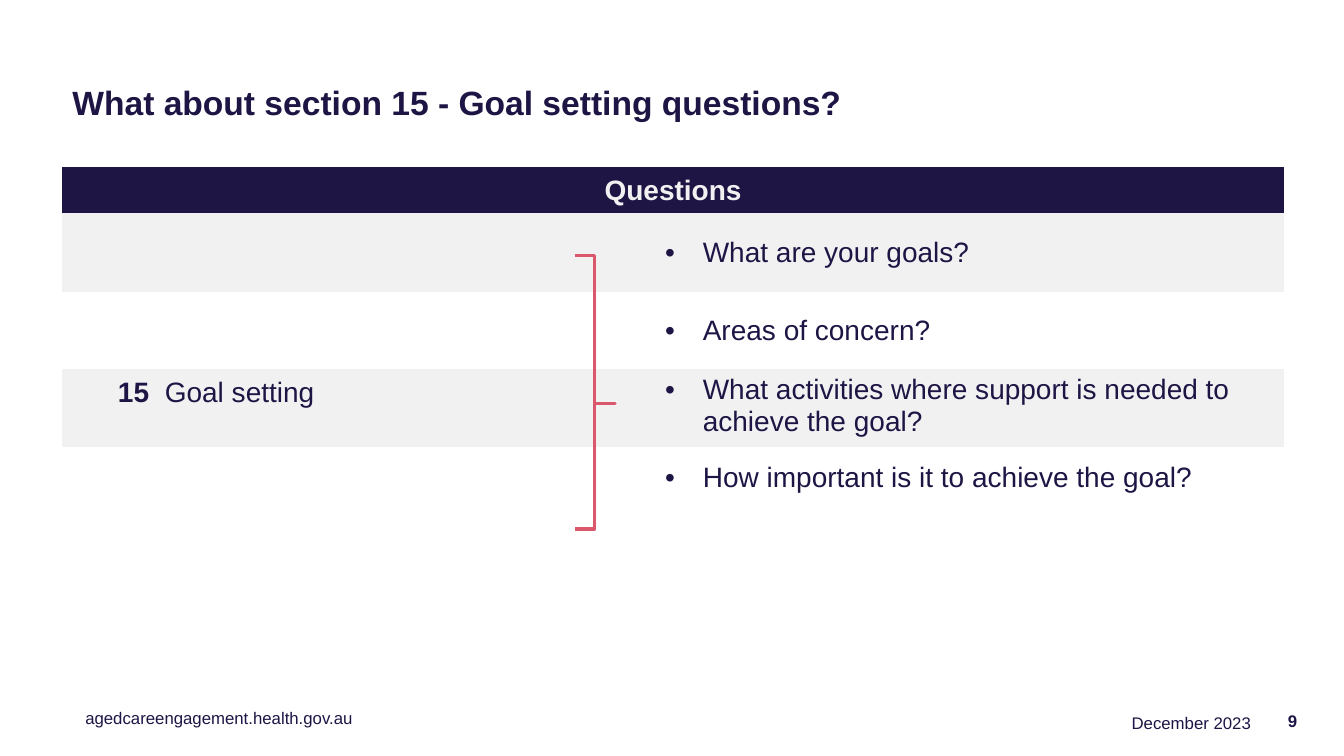
from lxml.etree import SubElement
from pptx import Presentation
from pptx.dml.color import RGBColor
from pptx.enum.shapes import MSO_SHAPE
from pptx.enum.text import MSO_ANCHOR, PP_ALIGN
from pptx.oxml.ns import qn
from pptx.util import Cm, Pt

# Content
TITLE = "What about section 15 - Goal setting questions?"
HEADER = "Questions"
SECTION = ("15", "\tGoal setting")
SECTION_ROW = 3
QUESTIONS = [
    "What are your goals?",
    "Areas of concern?",
    "What activities where support is needed to achieve the goal?",
    "How important is it to achieve the goal?",
]
# text, (left, top, width, height) in cm, alignment, anchor, bold
FOOTERS = [
    ("agedcareengagement.health.gov.au", (1.9, 17.7, 7.27, 0.77),
     PP_ALIGN.LEFT, MSO_ANCHOR.TOP, False),
    ("December 2023", (24.15, 17.83, 7.63, 0.77),
     PP_ALIGN.RIGHT, MSO_ANCHOR.TOP, False),
    ("9", (31.8, 17.65, 1.14, 1.02), PP_ALIGN.RIGHT, MSO_ANCHOR.MIDDLE, True),
]
COLORS = {"navy": "1E1545", "band": "F2F1F2", "brace": "DA576C"}
COLUMN_WIDTHS = [1.15, 8.41, 1.6, 3.17, 0.58, 15.85]
ROW_HEIGHTS = [1.15, 1.98, 1.96, 1.96, 2.34, 1.96, 1.3]
LINE_HEIGHT = 0.78


def color(name):
    return RGBColor.from_string(COLORS[name])


def add_run(paragraph, text, size, bold=False, color_name="navy"):
    run = paragraph.add_run()
    run.text = text
    run.font.name = "Arial"
    run.font.size = Pt(size)
    run.font.bold = bold
    run.font.color.rgb = color(color_name)


def add_bullet(paragraph):
    properties = paragraph._p.get_or_add_pPr()
    properties.set("marL", str(Cm(0.95)))
    properties.set("indent", str(Cm(-0.95)))
    SubElement(properties, qn("a:buFont")).set("typeface", "Arial")
    SubElement(properties, qn("a:buChar")).set("char", "•")


def add_tab_stop(paragraph, position):
    tabs = SubElement(paragraph._p.get_or_add_pPr(), qn("a:tabLst"))
    tab = SubElement(tabs, qn("a:tab"))
    tab.set("pos", str(position))
    tab.set("algn", "l")


def add_title(slide):
    title = slide.shapes.title
    title.left, title.top, title.width, title.height = (
        Cm(1.57), Cm(1.88), Cm(30.23), Cm(1.52))
    title.text_frame.vertical_anchor = MSO_ANCHOR.MIDDLE
    paragraph = title.text_frame.paragraphs[0]
    paragraph.alignment = PP_ALIGN.LEFT
    paragraph.line_spacing = 0.9
    add_run(paragraph, TITLE, 24, True)


def add_questions_table(slide):
    table = slide.shapes.add_table(
        len(ROW_HEIGHTS), len(COLUMN_WIDTHS), Cm(1.57), Cm(4.22),
        Cm(sum(COLUMN_WIDTHS)), Cm(sum(ROW_HEIGHTS))).table
    # Plain style without grid lines
    style = table._tbl.tblPr.find(qn("a:tableStyleId"))
    style.text = "{2D5ABB26-0587-4C30-8999-92F81FD0307C}"
    table.first_row = table.horz_banding = False
    for column, width in zip(table.columns, COLUMN_WIDTHS):
        column.width = Cm(width)

    # Row heights and banding
    for index, (row, height) in enumerate(zip(table.rows, ROW_HEIGHTS)):
        row.height = Cm(height)
        for cell in row.cells:
            cell.vertical_anchor = MSO_ANCHOR.MIDDLE
            if index in (0, 1, 3):
                cell.fill.solid()
                cell.fill.fore_color.rgb = color("band" if index else "navy")
            else:
                cell.fill.background()

    # Header across all columns
    header = table.cell(0, 0)
    header.merge(table.cell(0, len(COLUMN_WIDTHS) - 1))
    paragraph = header.text_frame.paragraphs[0]
    paragraph.alignment = PP_ALIGN.CENTER
    add_run(paragraph, HEADER, 20, True, "band")

    # Section name and its questions
    section = table.cell(SECTION_ROW, 1)
    section.margin_bottom = Cm(0.13 + LINE_HEIGHT)
    paragraph = section.text_frame.paragraphs[0]
    add_tab_stop(paragraph, Cm(1.18))
    for text, bold in zip(SECTION, (True, False)):
        add_run(paragraph, text, 20, bold)
    for index, question in enumerate(QUESTIONS, 1):
        cell = table.cell(index, 5)
        paragraph = cell.text_frame.paragraphs[0]
        add_bullet(paragraph)
        add_run(paragraph, question, 20)
    table.cell(SECTION_ROW, 5).vertical_anchor = MSO_ANCHOR.TOP
    table.cell(len(QUESTIONS), 5).margin_bottom = Cm(0.13 + LINE_HEIGHT)


def add_brace(slide):
    brace = slide.shapes.add_shape(
        MSO_SHAPE.RIGHT_BRACE, Cm(14.48), Cm(6.45), Cm(1.02), Cm(6.88))
    brace.adjustments[0] = 0
    brace.adjustments[1] = 0.542
    brace.shadow.inherit = False
    brace.fill.background()
    brace.line.color.rgb = color("brace")
    brace.line.width = Pt(2.25)


def add_footers(slide):
    for text, box, alignment, anchor, bold in FOOTERS:
        frame = slide.shapes.add_textbox(*map(Cm, box)).text_frame
        frame.word_wrap = True
        frame.vertical_anchor = anchor
        paragraph = frame.paragraphs[0]
        paragraph.alignment = alignment
        add_run(paragraph, text, 12, bold)


def main():
    presentation = Presentation()
    presentation.slide_width = Cm(33.87)
    presentation.slide_height = Cm(19.05)
    slide = presentation.slides.add_slide(presentation.slide_layouts[5])
    add_title(slide)
    add_questions_table(slide)
    add_brace(slide)
    add_footers(slide)
    presentation.save("out.pptx")


if __name__ == "__main__":
    main()
